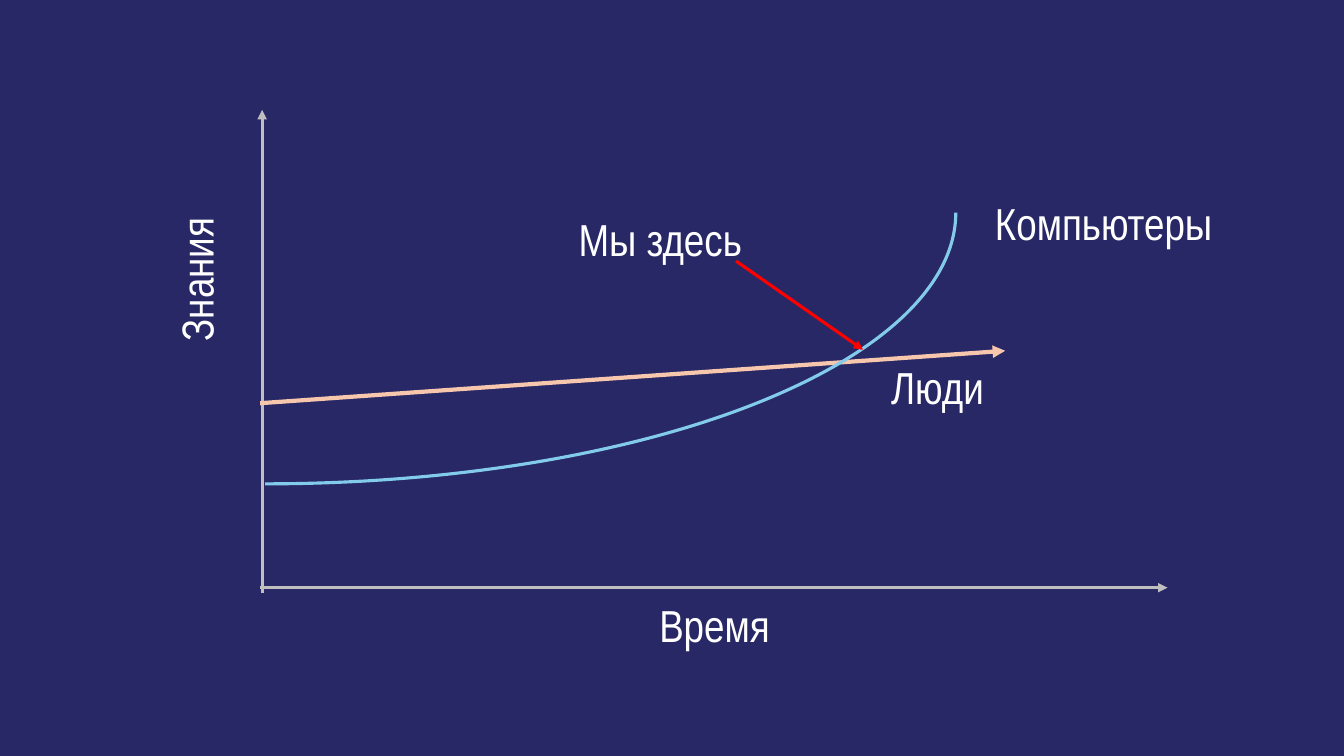
"""Build a slide comparing the growth of human and computer knowledge."""
from dataclasses import dataclass

from lxml.etree import SubElement
from pptx import Presentation
from pptx.dml.color import RGBColor
from pptx.enum.shapes import MSO_CONNECTOR as Connector, MSO_SHAPE as Shape
from pptx.enum.text import MSO_AUTO_SIZE as AutoSize
from pptx.oxml.ns import qn
from pptx.util import Inches, Pt


@dataclass(frozen=True)
class Theme:
    """Hold the colours, type and line widths of the slide."""
    background: str = "282866"
    text: str = "FFFFFF"
    axis: str = "BFBFBF"
    people: str = "F6C6AD"
    computers: str = "83CBEB"
    pointer: str = "FF0000"
    font: str = "Arial Narrow"
    size: float = 32
    thin: float = 2.25
    thick: float = 3


@dataclass(frozen=True)
class Box:
    """Describe a region in inches."""
    left: float
    top: float
    width: float
    height: float

    @property
    def bottom(self):
        """Return the lower edge."""
        return self.top + self.height


THEME = Theme()


def add_label(page, text, left, top, width, *, height=0.74, inset=0.1, rotation=0):
    """Add one line of text."""
    box = page.shapes.add_textbox(Inches(left), Inches(top), Inches(width), Inches(height))
    box.rotation = rotation
    frame = box.text_frame
    frame.word_wrap = True
    frame.auto_size = AutoSize.SHAPE_TO_FIT_TEXT
    frame.margin_top = frame.margin_bottom = Inches(inset)
    span = frame.paragraphs[0].add_run()
    span.text = text
    span.font.name = THEME.font
    span.font.size = Pt(THEME.size)
    span.font.color.rgb = RGBColor.from_string(THEME.text)


def style_line(line, color, width):
    """Set the colour and width of a line."""
    line.color.rgb = RGBColor.from_string(color)
    line.width = Pt(width)


def add_arrow(page, start, end, color, width=THEME.thin):
    """Add a straight arrow between two points."""
    points = [Inches(value) for value in (*start, *end)]
    arrow = page.shapes.add_connector(Connector.STRAIGHT, *points)
    style_line(arrow.line, color, width)
    SubElement(arrow.line._get_or_add_ln(), qn("a:tailEnd"), type="triangle")
    SubElement(arrow._element.spPr, qn("a:effectLst"))


def add_axes(page, box):
    """Draw both axes and their titles."""
    left, bottom = box.left, box.bottom
    add_arrow(page, (left - 0.02, bottom), (left + box.width, bottom), THEME.axis)
    add_arrow(page, (left, bottom + 0.05), (left, box.top), THEME.axis)
    add_label(page, "Время", left + 3.84, bottom, 1.71)
    add_label(page, "Знания", left - 1.51, box.top + 1.22, 1.71,
              height=0.64, inset=0.05, rotation=270)


def add_people(page, box):
    """Draw the slow growth of human knowledge."""
    left, top = box.left, box.top
    add_arrow(page, (left - 0.02, top + 2.91), (left + 7.37, top + 2.39),
              THEME.people, THEME.thick)
    add_label(page, "Люди", left + 6.14, top + 2.38, 1.54)


def add_computers(page, box):
    """Draw the fast growth of computer knowledge as a quarter ellipse."""
    left, top = box.left, box.top
    curve = page.shapes.add_shape(Shape.ARC, Inches(left - 6.82), Inches(top - 1.67),
                                  Inches(13.7), Inches(5.38))
    curve.adjustments[0] = 0
    curve.adjustments[1] = 54
    curve.shadow.inherit = False
    curve.fill.background()
    style_line(curve.line, THEME.computers, THEME.thin)
    add_label(page, "Компьютеры", left + 7.17, top + 0.75, 2.89)


def add_pointer(page, box):
    """Point at the present moment."""
    left, top = box.left, box.top
    add_label(page, "Мы здесь", left + 3.04, top + 0.91, 2.89)
    add_arrow(page, (left + 4.7, top + 1.5), (left + 5.96, top + 2.38), THEME.pointer)


def main():
    """Build and save the deck."""
    deck = Presentation()
    deck.slide_width, deck.slide_height = Inches(13.33), Inches(7.5)
    page = deck.slides.add_slide(deck.slide_layouts[6])
    fill = page.background.fill
    fill.solid()
    fill.fore_color.rgb = RGBColor.from_string(THEME.background)
    plot = Box(2.6, 1.09, 8.98, 4.74)
    for add_part in (add_axes, add_people, add_computers, add_pointer):
        add_part(page, plot)
    deck.save("out.pptx")


if __name__ == "__main__":
    main()
